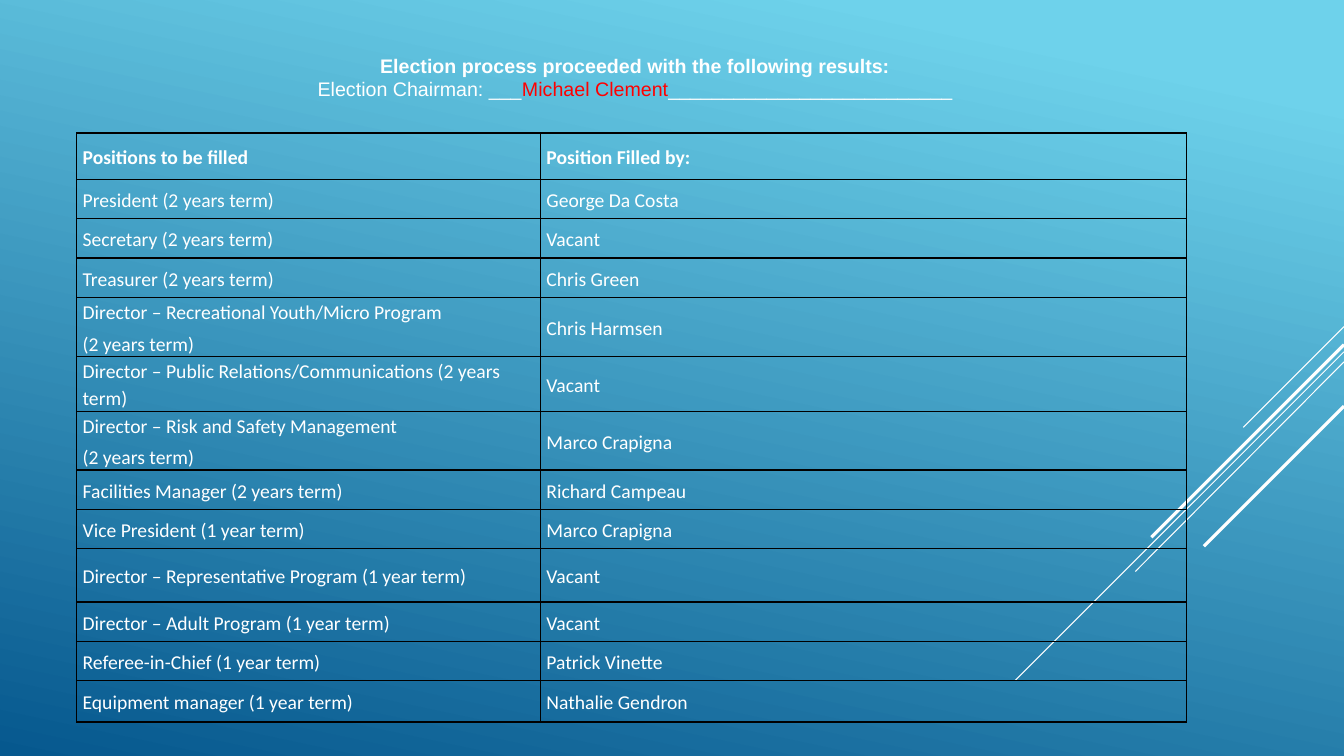
"""Build the slide of election results."""
from lxml.etree import SubElement
from pptx import Presentation
from pptx.dml.color import RGBColor
from pptx.enum.shapes import MSO_CONNECTOR
from pptx.enum.text import MSO_ANCHOR, MSO_AUTO_SIZE, PP_ALIGN
from pptx.oxml.ns import qn
from pptx.util import Pt

PX = 9144
WHITE = RGBColor(0xFF, 0xFF, 0xFF)
RED = RGBColor(0xFF, 0x00, 0x00)
SKY = RGBColor(0x6E, 0xD2, 0xEB)
NAVY = RGBColor(0x06, 0x58, 0x8E)
BLACK = "000000"

RAYS = [
    (324, 1233, 424, 0.75),
    (349, 1007, 675, 0.75),
    (359, 1126, 567, 0.75),
    (342, 1142, 533, 2.25),
    (403, 1194, 542, 2.25),
]
COLS = [460, 641]
ROWS = [
    (46, "Positions to be filled", "Position Filled by:"),
    (39, "President (2 years term)", "George Da Costa"),
    (39, "Secretary (2 years term)", "Vacant"),
    (39, "Treasurer (2 years term)", "Chris Green"),
    (52, "Director – Recreational Youth/Micro Program\n(2 years term)", "Chris Harmsen"),
    (42, "Director – Public Relations/Communications (2 years term)", "Vacant"),
    (52, "Director – Risk and Safety Management\n(2 years term)", "Marco Crapigna"),
    (39, "Facilities Manager (2 years term)", "Richard Campeau"),
    (39, "Vice President (1 year term)", "Marco Crapigna"),
    (53, "Director – Representative Program (1 year term)", "Vacant"),
    (39, "Director – Adult Program (1 year term)", "Vacant"),
    (39, "Referee-in-Chief (1 year term)", "Patrick Vinette"),
    (41, "Equipment manager (1 year term)", "Nathalie Gendron"),
]


def px(*nums):
    return [num * PX for num in nums]


def style(run, face, color=WHITE, bold=False):
    font = run.font
    font.name, font.size, font.bold = face, Pt(14), bold
    font.color.rgb = color


def paint(slide):
    fill = slide.background.fill
    fill.gradient()
    fill.gradient_angle = 258
    for stop, (color, place) in zip(fill.gradient_stops, [(SKY, 0.1), (NAVY, 1)]):
        stop.color.rgb = color
        stop.position = place


def add_ray(slide, top, left, low, width):
    ray = slide.shapes.add_connector(
        MSO_CONNECTOR.STRAIGHT, *px(1333, top, left, low))
    ray.line.color.rgb = WHITE
    ray.line.width = Pt(width)
    SubElement(ray.element.spPr, qn("a:effectLst"))


def add_head(slide):
    title = slide.shapes.title
    title.left, title.top, title.width, title.height = px(57, 48, 1121, 88)
    frame = title.text_frame
    frame.auto_size = MSO_AUTO_SIZE.NONE
    frame.word_wrap = True
    frame.vertical_anchor = MSO_ANCHOR.TOP
    frame.text = "Election process proceeded with the following results:\nElection Chairman: ___"
    first, second = frame.paragraphs
    for text in ("Michael Clement", "_" * 26):
        second.add_run().text = text
    for para in (first, second):
        para.alignment = PP_ALIGN.CENTER
        para._p.get_or_add_pPr().set("indent", str(25 * PX))
    style(first.runs[0], "Arial", bold=True)
    for run, color in zip(second.runs, (WHITE, RED, WHITE)):
        style(run, "Arial", color)


def add_edges(cell):
    props = cell._tc.get_or_add_tcPr()
    for side in ("lnL", "lnR", "lnT", "lnB"):
        line = SubElement(props, qn("a:" + side), w=str(Pt(1)))
        fill = SubElement(line, qn("a:solidFill"))
        SubElement(fill, qn("a:srgbClr"), val=BLACK)


def fill_cell(cell, text, bold):
    add_edges(cell)
    cell.fill.background()
    cell.margin_left, cell.margin_right = px(6, 6)
    cell.margin_top = cell.margin_bottom = 0
    cell.vertical_anchor = MSO_ANCHOR.MIDDLE
    cell.text_frame.text = text
    for para in cell.text_frame.paragraphs:
        para.line_spacing = 1.15
        para.space_after = Pt(2.9)
        style(para.runs[0], "Calibri", bold=bold)


def add_grid(slide):
    high = sum(row[0] for row in ROWS)
    grid = slide.shapes.add_table(
        len(ROWS), len(COLS), *px(76, 132, sum(COLS), high)).table
    grid.first_row = grid.horz_banding = False
    for col, width in zip(grid.columns, COLS):
        col.width = width * PX
    for num, (row, (tall, *texts)) in enumerate(zip(grid.rows, ROWS)):
        row.height = tall * PX
        for cell, text in zip(row.cells, texts):
            fill_cell(cell, text, num == 0)


def main():
    deck = Presentation()
    deck.slide_width, deck.slide_height = px(1333, 750)
    slide = deck.slides.add_slide(deck.slide_layouts[5])
    paint(slide)
    for ray in RAYS:
        add_ray(slide, *ray)
    add_grid(slide)
    add_head(slide)
    deck.save("out.pptx")


if __name__ == "__main__":
    main()
